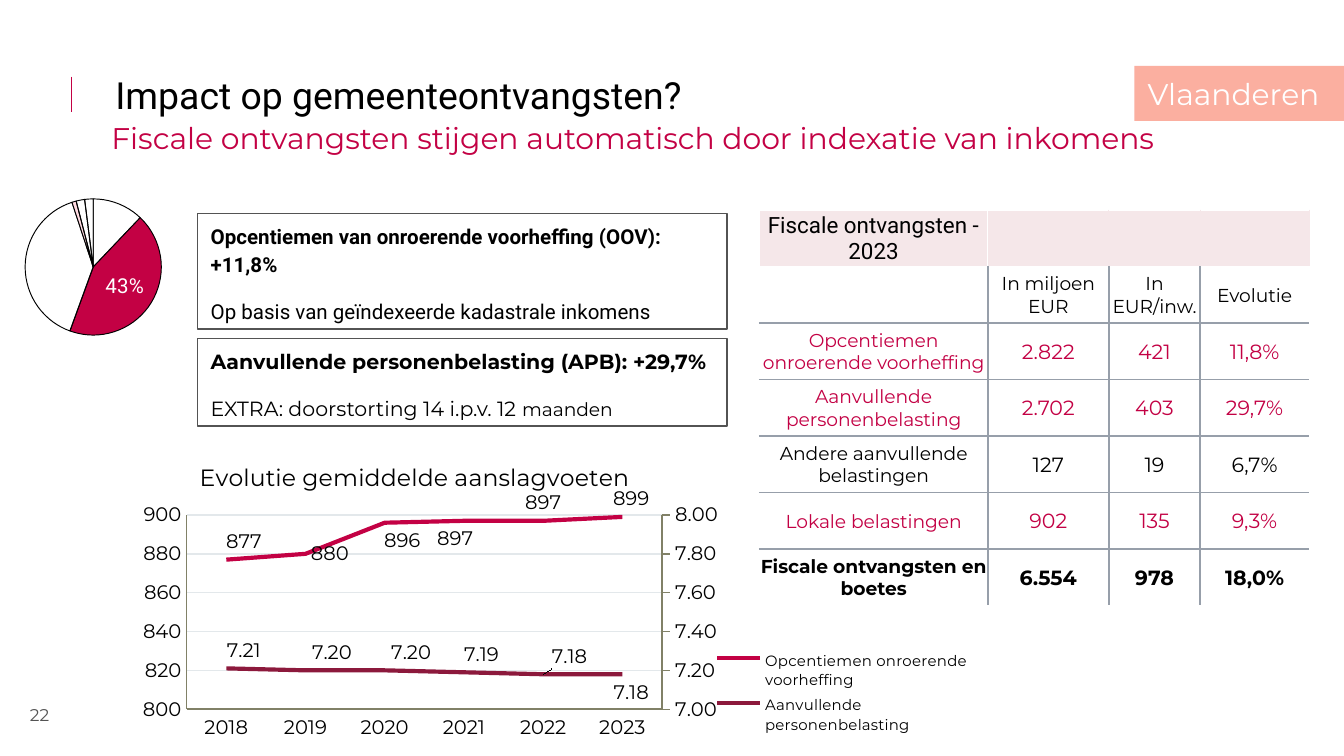
from copy import deepcopy
from dataclasses import dataclass

from pptx import Presentation
from pptx.chart.axis import ValueAxis
from pptx.chart.data import CategoryChartData
from pptx.dml.color import RGBColor as RGB
from pptx.enum.chart import XL_CHART_TYPE as Chart, XL_LABEL_POSITION as Spot
from pptx.enum.chart import XL_LEGEND_POSITION as LegendSide, XL_TICK_MARK as Tick
from pptx.enum.shapes import MSO_CONNECTOR as Connector, MSO_SHAPE as Shape
from pptx.enum.text import MSO_ANCHOR as Anchor, PP_ALIGN as Align
from pptx.oxml import parse_xml
from pptx.oxml.ns import nsdecls, qn
from pptx.oxml.xmlchemy import OxmlElement
from pptx.util import Pt


@dataclass(frozen=True)
class Theme:
    sans: str = "Montserrat"
    plain: str = "Roboto"
    black: RGB = RGB.from_string("000000")
    white: RGB = RGB.from_string("FFFFFF")
    gray: RGB = RGB.from_string("535353")
    rule: RGB = RGB.from_string("979FAA")
    axis: RGB = RGB.from_string("818167")
    grid: RGB = RGB.from_string("E3E8EB")
    red: RGB = RGB.from_string("C30144")
    wine: RGB = RGB.from_string("8C193C")
    blush: RGB = RGB.from_string("FFDAE1")
    header: RGB = RGB.from_string("F5E7E9")
    salmon: RGB = RGB.from_string("FBAFA0")
    title: float = 20
    subtitle: float = 16
    chart_title: float = 12.6
    heading: float = 12
    body: float = 11
    chart: float = 10.5
    small: float = 10
    number: float = 9.1
    legend: float = 8


theme = Theme()


def write(frame, lines, font, size, color, anchor=Anchor.TOP, align=Align.LEFT):
    """Fill a text frame, one paragraph per line."""
    frame.word_wrap = True
    frame.vertical_anchor = anchor
    for index, line in enumerate(lines):
        para = frame.add_paragraph() if index else frame.paragraphs[0]
        para.text = line
        para.alignment = align
        para.font.name, para.font.size = font, Pt(size)
        para.font.color.rgb = color


def place(parent, index, **fractions):
    """Give a chart part a manual layout in fractions of the chart."""
    for old in parent.findall(qn("c:layout")):
        parent.remove(old)
    inner = '<c:layoutTarget val="inner"/>' if parent.tag == qn("c:plotArea") else ""
    modes = "" if parent.tag == qn("c:dLbl") else '<c:xMode val="edge"/><c:yMode val="edge"/>'
    sizes = "".join(f'<c:{key} val="{value}"/>' for key, value in fractions.items())
    parent.insert(index, parse_xml(
        f'<c:layout {nsdecls("c")}><c:manualLayout>{inner}{modes}{sizes}'
        "</c:manualLayout></c:layout>"))


deck = Presentation()
deck.slide_width, deck.slide_height = Pt(720), Pt(405)
page = deck.slides.add_slide(deck.slide_layouts[6])
shapes = page.shapes

# Page number and title mark
box = shapes.add_textbox(Pt(8.6), Pt(374.4), Pt(25.2), Pt(16.6))
frame = box.text_frame
frame.margin_left = frame.margin_right = frame.margin_top = frame.margin_bottom = Pt(2.9)
write(frame, ["22"], theme.sans, theme.number, theme.gray, align=Align.CENTER)
mark = shapes.add_connector(Connector.STRAIGHT, Pt(38.2), Pt(41), Pt(38.2), Pt(59.8))
mark.line.color.rgb, mark.line.width = theme.red, Pt(0.75)
mark.element.spPr.append(OxmlElement("a:effectLst"))

# Pie of revenue shares
data = CategoryChartData()
data.categories = ["1", "2", "3", "4", "5", "6"]
data.add_series("Series 1", [12, 43, 39, 1, 2, 2])
pie = shapes.add_chart(Chart.PIE, Pt(-26), Pt(96.5), Pt(163.4), Pt(112.3), data).chart
pie.has_title = pie.has_legend = False
pie.font.name, pie.font.size = theme.sans, Pt(theme.small)
place(pie.plots[0]._element.getparent(), 0, x=0.24, y=0.09, w=0.45, h=0.65)
shares = pie.plots[0].series[0]
for index, color in enumerate([None, theme.red, None, theme.blush, None, None]):
    look = shares.points[index].format
    look.line.color.rgb, look.line.width = theme.black, Pt(0.5)
    if color is None:
        look.fill.background()
    else:
        look.fill.solid()
        look.fill.fore_color.rgb = color
shares.data_labels.show_value = False
label = shares.points[1].data_label
label.position = Spot.INSIDE_END
label.font.name, label.font.size = theme.plain, Pt(theme.body)
label.font.color.rgb = theme.white
share_label = shares._element.find(".//" + qn("c:dLbl"))
share_label.find(qn("c:showVal")).set("val", "0")
share_label.find(qn("c:showPercent")).set("val", "1")

# Title and subtitle
box = shapes.add_textbox(Pt(52.6), Pt(57.6), Pt(602.6), Pt(33.8))
write(box.text_frame, ["Fiscale ontvangsten stijgen automatisch door indexatie van inkomens"],
      theme.sans, theme.subtitle, theme.red)
box.text_frame.paragraphs[0].line_spacing = 1.15
box = shapes.add_textbox(Pt(54.7), Pt(38.2), Pt(626.4), Pt(24.5))
write(box.text_frame, ["Impact op gemeenteontvangsten?"],
      theme.plain, theme.title, theme.black, Anchor.MIDDLE)

# Explanation boxes
for top, height, font, lines in [
    (181.4, 46.8, theme.sans,
     ["Aanvullende personenbelasting (APB): +29,7%", "EXTRA: doorstorting 14 i.p.v. 12 "]),
    (114.5, 61.9, theme.plain,
     ["Opcentiemen van onroerende voorheffing (OOV): +11,8%",
      "Op basis van geïndexeerde kadastrale inkomens"]),
]:
    box = shapes.add_shape(Shape.RECTANGLE, Pt(105.8), Pt(top), Pt(283.7), Pt(height))
    box.shadow.inherit = False
    box.fill.background()
    box.line.color.rgb, box.line.width = theme.gray, Pt(0.75)
    write(box.text_frame, lines, font, theme.body, theme.black)
    for para in box.text_frame.paragraphs:
        para.line_spacing, para.space_after = 1.15, Pt(10)
    box.text_frame.paragraphs[0].font.bold = True
    if lines[1].endswith(" "):
        span = para.add_run()
        span.text = "maanden"
        span.font.size = Pt(theme.small)

# Line chart of average tax rates
data = CategoryChartData()
data.categories = ["2018", "2019", "2020", "2021", "2022", "2023"]
data.add_series("Opcentiemen onroerende voorheffing", [877, 880, 896, 897, 897, 899], "0")
data.add_series("Aanvullende personenbelasting", [7.21, 7.2, 7.2, 7.19, 7.18, 7.18], "0.00")
rates = shapes.add_chart(Chart.LINE, Pt(67), Pt(236.9), Pt(471.6), Pt(162.7), data).chart
rates.font.name, rates.font.size = theme.sans, Pt(theme.chart)
rates.font.color.rgb = theme.black
rates.has_title = True
write(rates.chart_title.text_frame, ["Evolutie gemiddelde aanslagvoeten"],
      theme.sans, theme.chart_title, theme.black)
rates.chart_title.text_frame.paragraphs[0].font.bold = False
place(rates.chart_title._element, 1, x=0.08, y=0.05)
rates.has_legend = True
rates.legend.position = LegendSide.RIGHT
rates.legend.include_in_layout = False
rates.legend.font.name, rates.legend.font.size = theme.sans, Pt(theme.legend)
rates.legend.font.color.rgb = theme.black
place(rates.legend._element, 1, x=0.66, y=0.67, w=0.31, h=0.31)

# Second plot and its axes on the right
left_axis = rates.value_axis
left_axis.has_major_gridlines = True
grid = left_axis.major_gridlines.format.line
grid.color.rgb, grid.width = theme.grid, Pt(0.75)
for old in left_axis._element.findall(qn("c:crossBetween")):
    left_axis._element.remove(old)
left_axis._element.find(qn("c:crosses")).addnext(
    parse_xml(f'<c:crossBetween {nsdecls("c")} val="between"/>'))
first_plot = rates.plots[0]._element
plot_area = first_plot.getparent()
second_plot = deepcopy(first_plot)
first_plot.remove(first_plot.findall(qn("c:ser"))[1])
second_plot.remove(second_plot.findall(qn("c:ser"))[0])
first_plot.addnext(second_plot)
hidden_axis = deepcopy(rates.category_axis._element)
right_element = deepcopy(left_axis._element)
left_axis._element.addnext(right_element)
right_element.addnext(hidden_axis)
for node, number in zip(second_plot.findall(qn("c:axId")), ["5001", "5002"]):
    node.set("val", number)
for node, own, other in [(hidden_axis, "5001", "5002"), (right_element, "5002", "5001")]:
    node.find(qn("c:axId")).set("val", own)
    node.find(qn("c:crossAx")).set("val", other)
hidden_axis.find(qn("c:delete")).set("val", "1")
right_element.find(qn("c:axPos")).set("val", "r")
right_element.find(qn("c:crosses")).set("val", "max")
right_axis = ValueAxis(right_element)
right_axis.has_major_gridlines = False
place(plot_area, 0, x=0.07, y=0.24, w=0.54, h=0.64)

for axis, low, high, step, code, tick in [
    (left_axis, 800, 900, 20, "0", Tick.NONE),
    (right_axis, 7, 8, 0.2, "0.00", Tick.OUTSIDE),
]:
    axis.minimum_scale, axis.maximum_scale, axis.major_unit = low, high, step
    axis.major_tick_mark = tick
    axis.tick_labels.number_format = code
    axis.tick_labels.number_format_is_linked = False
rates.category_axis.major_tick_mark = Tick.NONE
for axis in (rates.category_axis, left_axis, right_axis):
    axis.format.line.color.rgb, axis.format.line.width = theme.axis, Pt(0.75)
    axis.tick_labels.font.name, axis.tick_labels.font.size = theme.sans, Pt(theme.chart)
    axis.tick_labels.font.color.rgb = theme.black

# Lines and their labels: position and sideways shift per year
over, under, right = Spot.ABOVE, Spot.BELOW, Spot.RIGHT
for plot, color, labels in zip(rates.plots, [theme.red, theme.wine], [
    [(over, 0.02), (right, 0), (under, 0.02), (under, -0.01), (over, 0), (over, 0.01)],
    [(over, 0.02), (over, 0.03), (over, 0.03), (over, 0.02), (over, 0.03), (under, 0.01)],
]):
    series = plot.series[0]
    series.smooth = False
    series.format.line.color.rgb, series.format.line.width = color, Pt(2.25)
    for index, (spot, shift) in enumerate(labels):
        label = series.points[index].data_label
        label.position = spot
        label.font.name, label.font.size = theme.sans, Pt(theme.chart)
        label.font.color.rgb = theme.black
    for node, (spot, shift) in zip(series._element.iter(qn("c:dLbl")), labels):
        if shift:
            place(node, 1, x=shift, y=0)

# Table of tax revenue
rows = [
    ["Fiscale ontvangsten - 2023", "", "", ""],
    ["", "In miljoen EUR", "In EUR/inw.", "Evolutie"],
    ["Opcentiemen onroerende voorheffing", "2.822", "421", "11,8%"],
    ["Aanvullende personenbelasting", "2.702", "403", "29,7%"],
    ["Andere aanvullende belastingen", "127", "19", "6,7%"],
    ["Lokale belastingen", "902", "135", "9,3%"],
    ["Fiscale ontvangsten en boetes", "6.554", "978", "18,0%"],
]
last = len(rows) - 1
table = shapes.add_table(7, 4, Pt(406.8), Pt(112.5), Pt(294.5), Pt(212.1)).table
table.first_row = table.horz_banding = False
for column, width in zip(table.columns, [122.4, 64.8, 49, 58.3]):
    column.width = Pt(width)
for r, row in enumerate(rows):
    table.rows[r].height = Pt(30.3)
    for c, text in enumerate(row):
        cell = table.cell(r, c)
        cell.margin_left = cell.margin_right = cell.margin_top = Pt(0.72)
        cell.margin_bottom = 0
        size = theme.heading if r == 0 else theme.body if r > 1 and c else theme.small
        write(cell.text_frame, [text], theme.sans if r else theme.plain, size,
              theme.red if r in (2, 3, 5) else theme.black, align=Align.CENTER)
        cell.text_frame.paragraphs[0].font.bold = r == last
        cell.vertical_anchor = Anchor.MIDDLE
        if r:
            cell.fill.background()
        else:
            cell.fill.solid()
            cell.fill.fore_color.rgb = theme.header
        plain = theme.white if r or c == 0 else theme.header
        sides = {"L": theme.rule if r and c else theme.white if c < 2 else plain,
                 "R": theme.rule if r and c < 3 else plain,
                 "T": theme.rule if r > 1 else theme.white,
                 "B": theme.rule if 0 < r < last else theme.white}
        for index, (side, color) in enumerate(sides.items()):
            width = Pt(1 if color == theme.rule else 0.5)
            cell._tc.get_or_add_tcPr().insert(index, parse_xml(
                f'<a:ln{side} {nsdecls("a")} w="{width}"><a:solidFill>'
                f'<a:srgbClr val="{color}"/></a:solidFill></a:ln{side}>'))

# Region tag
tag = shapes.add_shape(Shape.RECTANGLE, Pt(607.7), Pt(35.3), Pt(112.3), Pt(29.5))
tag.shadow.inherit = False
tag.fill.solid()
tag.fill.fore_color.rgb = theme.salmon
tag.line.fill.background()
write(tag.text_frame, ["Vlaanderen"], theme.sans, theme.subtitle, theme.white, Anchor.MIDDLE)

deck.save("out.pptx")
